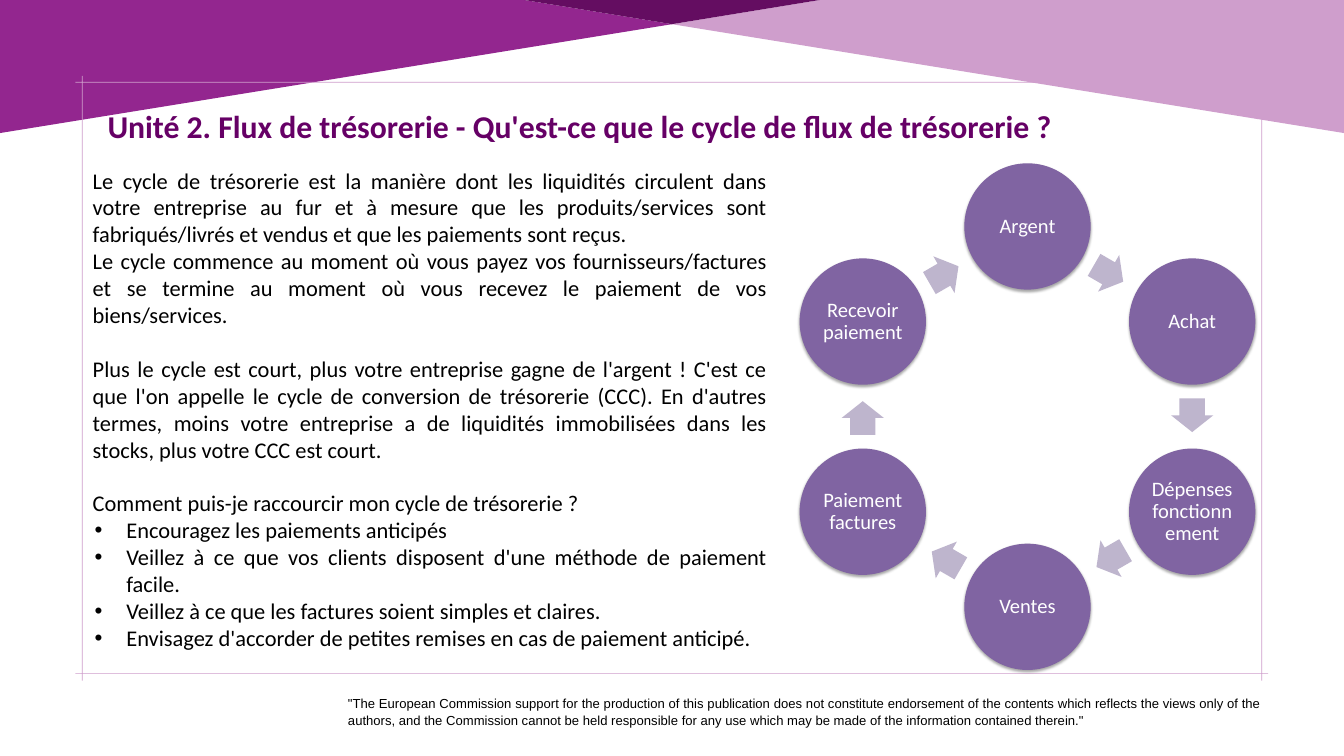
from math import cos, radians, sin

from lxml.etree import SubElement
from pptx import Presentation
from pptx.dml.color import RGBColor as RGB
from pptx.enum.shapes import MSO_SHAPE as SHAPE
from pptx.enum.text import MSO_ANCHOR as ANCHOR, MSO_AUTO_SIZE as AUTO, PP_ALIGN as ALIGN
from pptx.oxml.ns import qn
from pptx.util import Inches, Pt

COLORS = {
    "purple": "93268F", "pink": "CF9ECC", "dark": "640D61", "title": "660066",
    "circle": "8064A2", "arrow": "BEB5CD", "black": "000000", "white": "FFFFFF",
}
TITLE = "Unité 2. Flux de trésorerie - Qu'est-ce que le cycle de flux de trésorerie ?"
BODY = [
    ("Le cycle de trésorerie est la manière dont les liquidités circulent dans votre entreprise "
     "au fur et à mesure que les produits/services sont fabriqués/livrés et vendus et que les "
     "paiements sont reçus.", 0),
    ("Le cycle commence au moment où vous payez vos fournisseurs/factures et se termine au moment "
     "où vous recevez le paiement de vos biens/services.", 0),
    ("Plus le cycle est court, plus votre entreprise gagne de l'argent ! C'est ce que l'on appelle "
     "le cycle de conversion de trésorerie (CCC). En d'autres termes, moins votre entreprise a de "
     "liquidités immobilisées dans les stocks, plus votre CCC est court.", 29),
    ("Comment puis-je raccourcir mon cycle de trésorerie ?", 29),
]
TIPS = [
    "Encouragez les paiements anticipés",
    "Veillez à ce que vos clients disposent d'une méthode de paiement facile.",
    "Veillez à ce que les factures soient simples et claires.",
    "Envisagez d'accorder de petites remises en cas de paiement anticipé.",
]
STEPS = ["Argent", "Achat", "Dépenses fonctionnement", "Ventes", "Paiement factures",
         "Recevoir paiement"]
DISCLAIMER = (
    "\"The European Commission support for the production of this publication does not constitute "
    "endorsement of the contents which reflects the views only of the authors, and the Commission "
    "cannot be held responsible for any use which may be made of the information contained therein.\""
)
FRAME_X = (1.12, 1.22, 1.23, 18.77, 18.78, 18.87)
FRAME_Y = (1.13, 1.22, 1.23, 10.02, 10.03, 10.13)
FRAME_OUTER = ["01", "11", "10", "20", "21", "31", "30", "40", "41", "51", "52", "42", "43", "53",
               "54", "44", "45", "35", "34", "24", "25", "15", "14", "04", "03", "13", "12", "02"]
FRAME_INNER = ["22", "23", "33", "32"]


def rgb(name):
    """Return the named colour."""
    return RGB.from_string(COLORS[name])


def paint(sp, color):
    """Give a shape a flat fill without line or shadow."""
    sp.fill.solid()
    sp.fill.fore_color.rgb = rgb(color)
    sp.line.fill.background()
    sp.shadow.inherit = False


def add_polygon(s, color, *contours):
    """Draw a filled outline from one or more closed contours."""
    fb = None
    for first, *rest in contours:
        x, y = map(Inches, first)
        if fb is None:
            fb = s.shapes.build_freeform(x, y)
        else:
            fb.move_to(x, y)
        fb.add_line_segments([(Inches(px), Inches(py)) for px, py in rest])
    paint(fb.convert_to_shape(), color)


def place(sp, left, top, width, height):
    """Set the position and size of a shape in inches."""
    sp.left, sp.top, sp.width, sp.height = map(Inches, (left, top, width, height))


def add_run(p, text, size, color, font="Calibri", bold=False):
    """Add one formatted run to a paragraph."""
    r = p.add_run()
    r.text = text
    r.font.size, r.font.name, r.font.bold = Pt(size), font, bold
    r.font.color.rgb = rgb(color)


def set_frame(tf, anchor=ANCHOR.TOP):
    """Make a text frame wrap at a fixed size."""
    tf.word_wrap, tf.auto_size, tf.vertical_anchor = True, AUTO.NONE, anchor


def set_bullet(p, bullet):
    """Give a paragraph a black bullet with hanging indent, or none."""
    pPr = p._p.get_or_add_pPr()
    pPr.set("marL", str(Inches(0.5) if bullet else 0))
    pPr.set("indent", str(Inches(-0.47) if bullet else 0))
    if bullet:
        clr = SubElement(pPr, qn("a:buClr"))
        SubElement(clr, qn("a:srgbClr"), val=COLORS["black"])
        SubElement(pPr, qn("a:buFont"), typeface="Arial")
        SubElement(pPr, qn("a:buChar"), char="•")
    else:
        SubElement(pPr, qn("a:buNone"))


def add_background(s):
    """Draw the top triangles and the thin frame."""
    def frame(keys):
        """Turn grid keys into frame points."""
        return [(FRAME_X[int(i)], FRAME_Y[int(j)]) for i, j in keys]

    add_polygon(s, "purple", [(0, 1.98), (0, 0), (7.8, 0), (10, 0.36)])
    add_polygon(s, "pink", frame(FRAME_OUTER), frame(FRAME_INNER))
    add_polygon(s, "pink", [(20, 1.98), (10, 0.36), (12.2, 0), (20, 0)])
    add_polygon(s, "dark", [(10, 0.36), (7.8, 0), (12.2, 0)])


def add_disclaimer(s):
    """Write the funding disclaimer at the bottom."""
    sp = s.shapes.add_textbox(*map(Inches, (5.08, 10.29, 13.79, 0.52)))
    set_frame(sp.text_frame)
    p = sp.text_frame.paragraphs[0]
    p.alignment, p.line_spacing = ALIGN.JUSTIFY, 1.07
    add_run(p, DISCLAIMER, 14, "black", "Arial")


def fill_title(sp):
    """Write the slide title."""
    place(sp, 1.5, 1.54, 14.72, 0.67)
    set_frame(sp.text_frame)
    p = sp.text_frame.paragraphs[0]
    p.alignment = ALIGN.LEFT
    add_run(p, TITLE, 34, "title", bold=True)


def fill_body(sp):
    """Write the explanation and the bulleted tips."""
    place(sp, 1.28, 2.43, 10.23, 7.78)
    tf = sp.text_frame
    set_frame(tf)
    rows = [(text, gap, False) for text, gap in BODY] + [(tip, 0, True) for tip in TIPS]
    for i, (text, gap, bullet) in enumerate(rows):
        p = tf.add_paragraph() if i else tf.paragraphs[0]
        set_bullet(p, bullet)
        p.alignment, p.space_before = ALIGN.JUSTIFY, Pt(gap)
        add_run(p, text, 24, "black")


def add_circle(s, text, cx, cy, size=1.88):
    """Draw one labelled step of the cycle with a soft shadow."""
    sp = s.shapes.add_shape(SHAPE.OVAL, *map(Inches, (cx - size / 2, cy - size / 2, size, size)))
    paint(sp, "circle")
    shadow = SubElement(sp.element.spPr.find(qn("a:effectLst")), qn("a:outerShdw"),
                        blurRad=str(Pt(3.1)), dist=str(Pt(1.8)), dir="5400000", rotWithShape="0")
    clr = SubElement(shadow, qn("a:srgbClr"), val=COLORS["black"])
    SubElement(clr, qn("a:alpha"), val="35000")
    tf = sp.text_frame
    set_frame(tf, ANCHOR.MIDDLE)
    tf.margin_left = tf.margin_right = tf.margin_top = tf.margin_bottom = Inches(0.03)
    p = tf.paragraphs[0]
    p.alignment, p.line_spacing = ALIGN.CENTER, 0.9
    add_run(p, text, 22, "white")


def add_arrow(s, cx, cy, angle, width=0.5, height=0.63):
    """Draw one block arrow turned to the given angle."""
    sp = s.shapes.add_shape(SHAPE.RIGHT_ARROW,
                            *map(Inches, (cx - width / 2, cy - height / 2, width, height)))
    sp.adjustments[0], sp.adjustments[1] = 0.6, 0.5
    sp.rotation = angle
    paint(sp, "arrow")


def add_cycle(s, cx=15.29, cy=6.2, radius=2.83):
    """Lay the steps round a ring, with an arrow after each."""
    turn = 360 / len(STEPS)
    mid = radius * cos(radians(turn / 2))
    for i, text in enumerate(STEPS):
        a = radians(i * turn)
        add_circle(s, text, cx + radius * sin(a), cy - radius * cos(a))
        b = a + radians(turn / 2)
        add_arrow(s, cx + mid * sin(b) - 0.02 * cos(b), cy - mid * cos(b) - 0.02 * sin(b),
                  (i + 0.5) * turn)


def main():
    """Build the slide and save it."""
    prs = Presentation()
    prs.slide_width, prs.slide_height = Inches(20), Inches(11.25)
    s = prs.slides.add_slide(prs.slide_layouts[1])
    title, body = s.placeholders
    add_background(s)
    add_disclaimer(s)
    for sp in (title, body):
        s.shapes.element.append(sp.element)
    fill_title(title)
    fill_body(body)
    add_cycle(s)
    prs.save("out.pptx")


if __name__ == "__main__":
    main()
